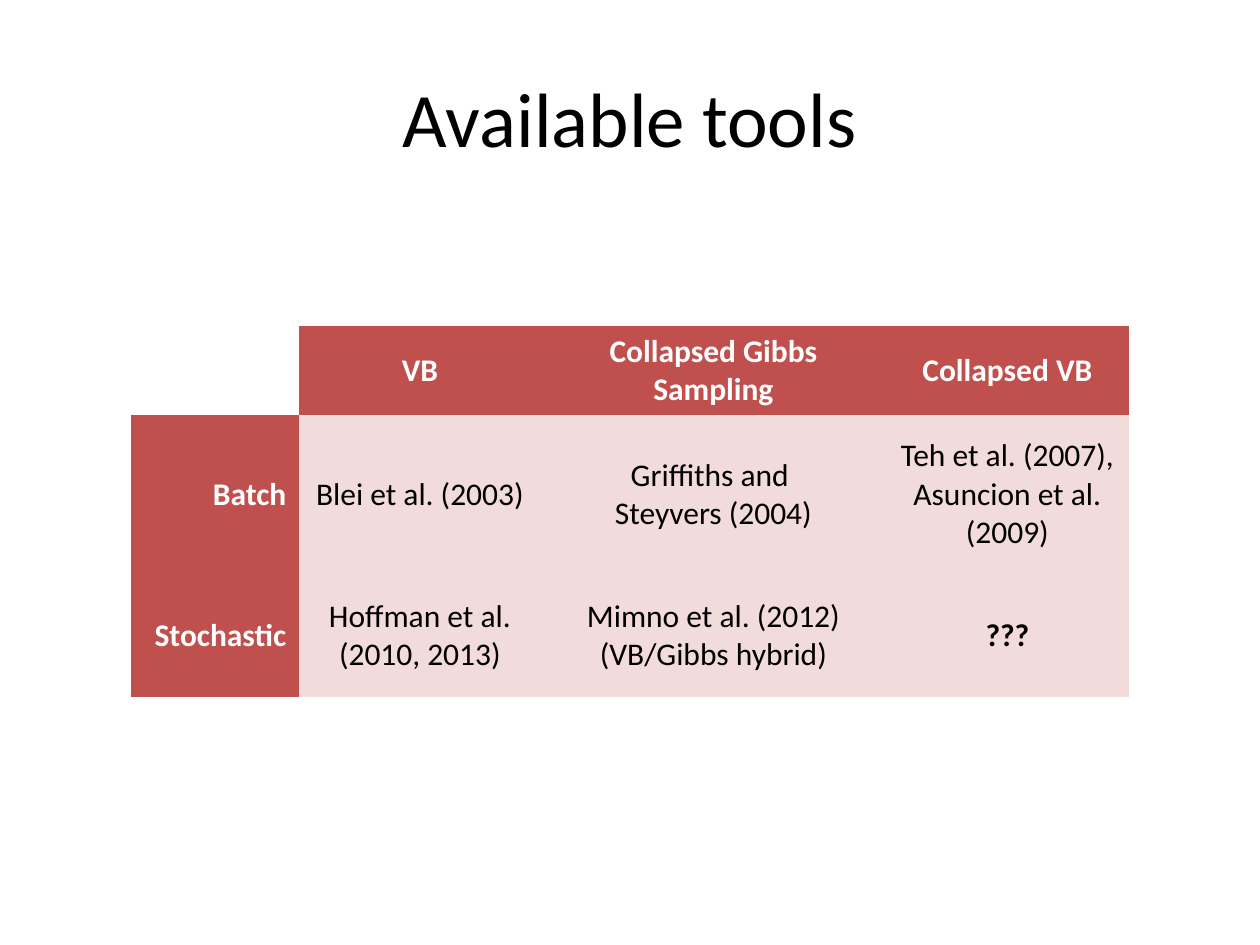
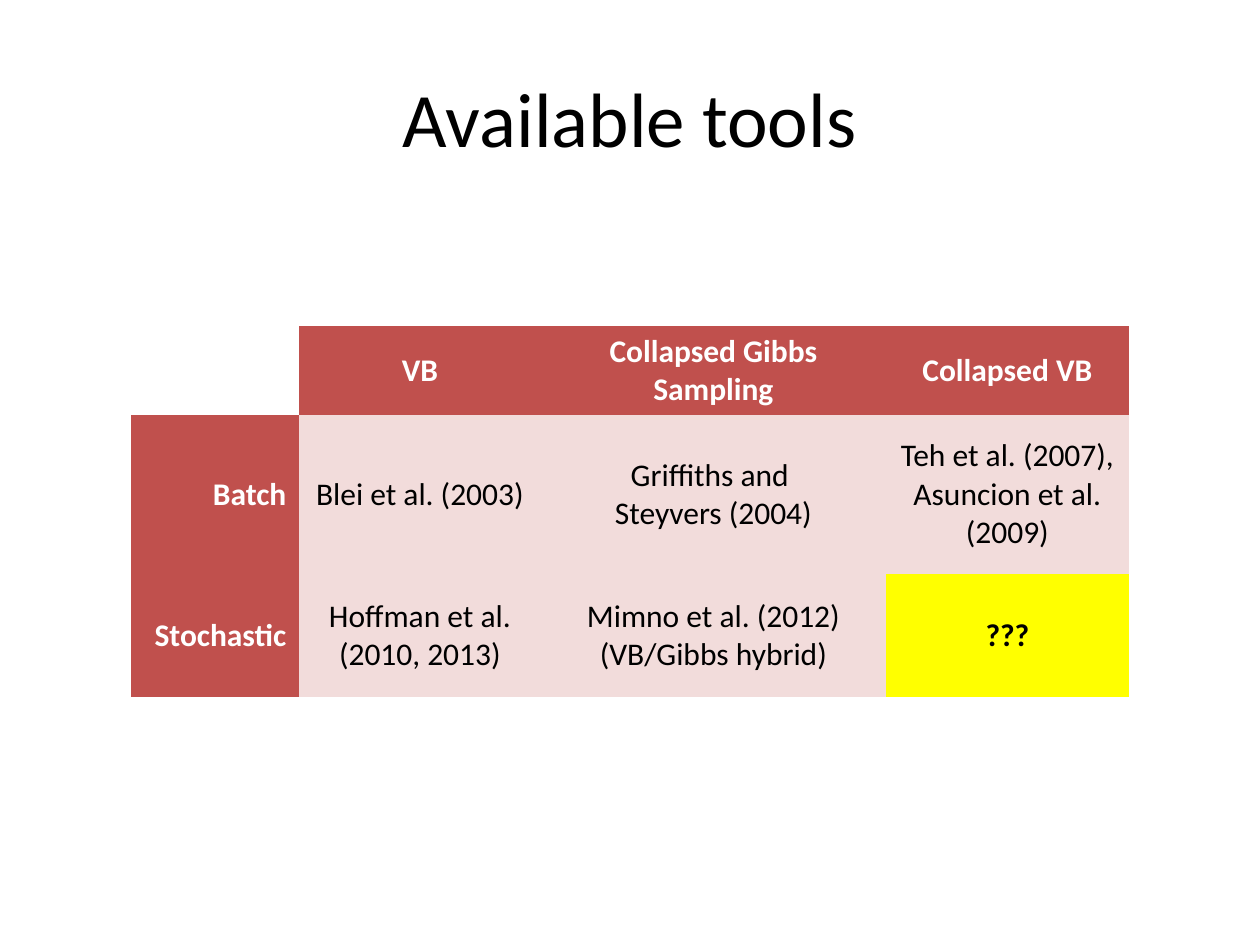
"""Build two slides comparing the available tools, the second marking the gap."""
from pptx import Presentation
from pptx.dml.color import RGBColor
from pptx.enum.text import MSO_ANCHOR as Anchor, PP_ALIGN as Align
from pptx.oxml.ns import qn
from pptx.util import Emu, Pt

TITLE = "Available tools"
TOOLS = [
    ["", "VB", "Collapsed Gibbs Sampling", "Collapsed VB"],
    ["Batch", "Blei et al. (2003)", "Griffiths and \nSteyvers (2004)",
     "Teh et al. (2007), Asuncion et al. (2009)"],
    ["Stochastic", "Hoffman et al. (2010, 2013)",
     "Mimno et al. (2012) (VB/Gibbs hybrid)", "???"],
]
OPEN_QUESTION = "???"

WHITE = RGBColor(0xFF, 0xFF, 0xFF)
BLACK = RGBColor(0x00, 0x00, 0x00)
RED = RGBColor(0xC0, 0x50, 0x4D)
PINK = RGBColor(0xF2, 0xDC, 0xDB)
YELLOW = RGBColor(0xFF, 0xFF, 0x00)
GAP_FILLS = [PINK, YELLOW]

FONT = "Calibri"
NO_STYLE_NO_GRID = "{2D5ABB26-0587-4C30-8999-92F81FD0307C}"
SLIDE_SIZE = (1260, 945)
TITLE_BOX = (63, 38, 1134, 157)
TABLE_CORNER = (131, 326)
COLUMN_WIDTHS = [168, 242, 345, 243]
ROW_HEIGHTS = [89, 159, 123]


def px(length):
    return Emu(round(length * 914400 / 126))


def write(frame, text, size=18, color=BLACK, bold=False, align=Align.CENTER):
    frame.text = text
    for paragraph in frame.paragraphs:
        paragraph.alignment = align
        font = paragraph.font
        font.name, font.size, font.bold = FONT, Pt(size), bold
        font.color.rgb = color


def add_title(slide):
    frame = slide.shapes.add_textbox(*map(px, TITLE_BOX)).text_frame
    frame.word_wrap = True
    frame.vertical_anchor = Anchor.MIDDLE
    write(frame, TITLE, size=44)


def cell_fill(row, column, text, gap_fill):
    if row == column == 0:
        return WHITE
    if row == 0 or column == 0:
        return RED
    return gap_fill if text == OPEN_QUESTION else PINK


def add_tools(slide, gap_fill):
    size = (sum(COLUMN_WIDTHS), sum(ROW_HEIGHTS))
    tools = slide.shapes.add_table(
        len(ROW_HEIGHTS), len(COLUMN_WIDTHS), *map(px, TABLE_CORNER + size)).table
    tools._tbl.tblPr.find(qn("a:tableStyleId")).text = NO_STYLE_NO_GRID
    tools.horz_banding = False
    for column, width in zip(tools.columns, COLUMN_WIDTHS):
        column.width = px(width)
    for row, height in zip(tools.rows, ROW_HEIGHTS):
        row.height = px(height)
    for r, texts in enumerate(TOOLS):
        for c, text in enumerate(texts):
            cell = tools.cell(r, c)
            heading = r == 0 or c == 0
            cell.vertical_anchor = Anchor.MIDDLE
            cell.fill.solid()
            cell.fill.fore_color.rgb = cell_fill(r, c, text, gap_fill)
            write(cell.text_frame, text, color=WHITE if heading else BLACK,
                  bold=heading or text == OPEN_QUESTION,
                  align=Align.RIGHT if c == 0 else Align.CENTER)


def main():
    deck = Presentation()
    deck.slide_width, deck.slide_height = map(px, SLIDE_SIZE)
    for gap_fill in GAP_FILLS:
        slide = deck.slides.add_slide(deck.slide_layouts[6])
        add_title(slide)
        add_tools(slide, gap_fill)
    deck.save("out.pptx")


if __name__ == "__main__":
    main()
